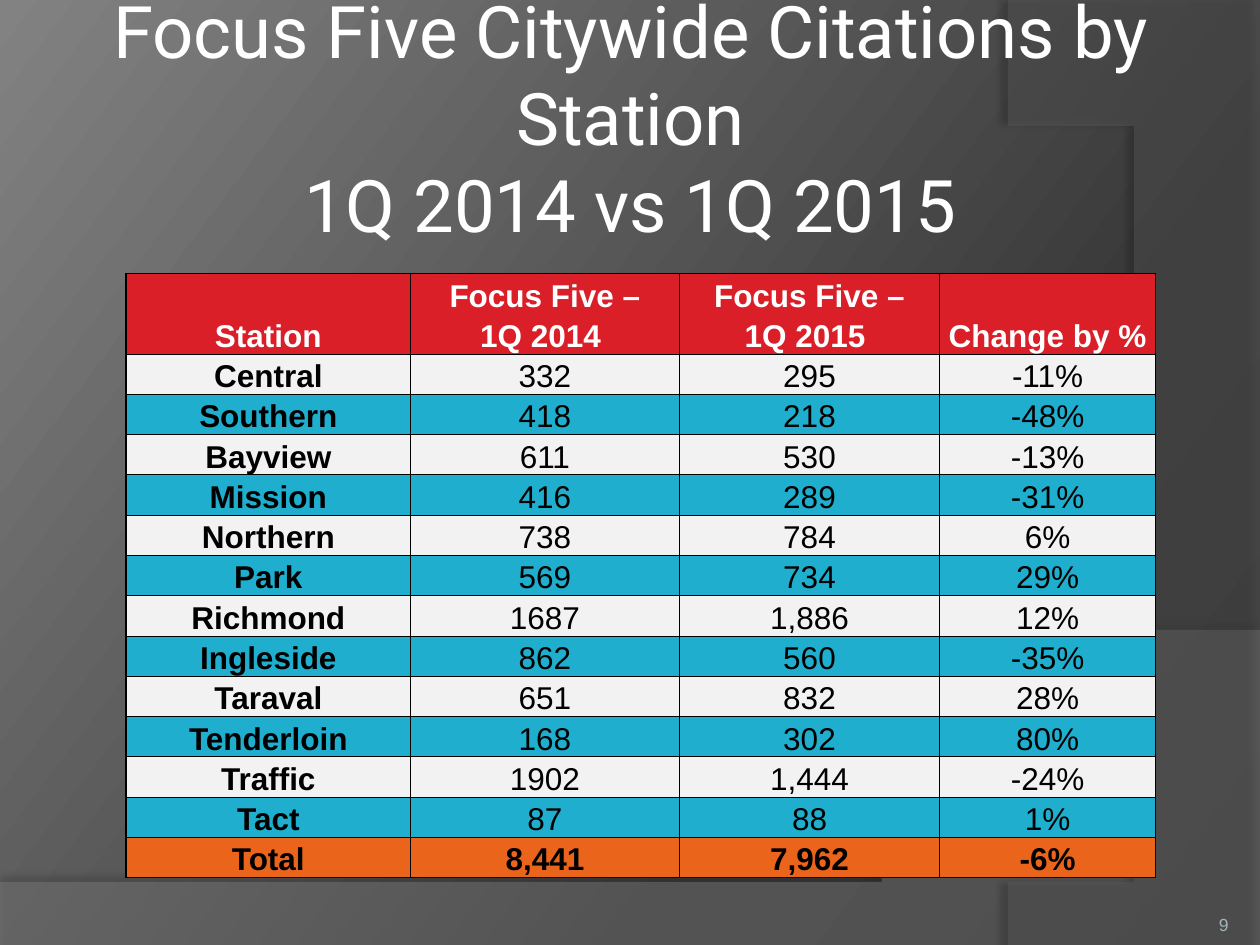
from dataclasses import dataclass

import lxml.etree as etree
import pptx
import pptx.dml.color
import pptx.enum.text
import pptx.oxml
import pptx.oxml.ns
import pptx.util
from pptx.dml.color import RGBColor
from pptx.util import Inches

WHITE = RGBColor(0xFF, 0xFF, 0xFF)
BLACK = RGBColor(0, 0, 0)
RED = RGBColor(0xDA, 0x1F, 0x28)
PALE = RGBColor(0xF2, 0xF2, 0xF2)
TEAL = RGBColor(0x1F, 0xAE, 0xCD)
ORANGE = RGBColor(0xEB, 0x64, 0x1B)
GRAY = RGBColor(0x7F, 0x7F, 0x7F)
DARK = RGBColor(0x5E, 0x5E, 0x5E)
MIST = RGBColor(0xA4, 0xB5, 0xB9)
GLOW = (
    (0, RGBColor(0x2F, 0x2F, 0x2F)),
    (30, RGBColor(0x38, 0x38, 0x38)),
    (100, RGBColor(0x82, 0x82, 0x82)),
)
NS = pptx.oxml.ns.nsdecls("a")
PLAIN = "{2D5ABB26-0587-4C30-8999-92F81FD0307C}"
ALIGN = pptx.enum.text.PP_ALIGN
ANCHOR = pptx.enum.text.MSO_ANCHOR

WIDTHS = (2.26, 2.13, 2.07, 1.71)
HEAD = (
    ("", "Focus Five –", "Focus Five –", "Change by %"),
    ("Station", "1Q 2014 ", "1Q 2015 ", ""),
)
ROWS = (
    ("Central", "332", "295", "-11%"),
    ("Southern", "418", "218", "-48%"),
    ("Bayview", "611", "530", "-13%"),
    ("Mission", "416", "289", "-31%"),
    ("Northern", "738", "784", "6%"),
    ("Park", "569", "734", "29%"),
    ("Richmond", "1687", "1,886", "12%"),
    ("Ingleside", "862", "560", "-35%"),
    ("Taraval", "651", "832", "28%"),
    ("Tenderloin", "168", "302", "80%"),
    ("Traffic", "1902", "1,444", "-24%"),
    ("Tact", "87", "88", "1%"),
    ("Total", "8,441", "7,962", "-6%"),
)

Point = tuple[float, float]


@dataclass
class Wave:
    """A filled outline; a step of three points is a Bezier curve."""
    start: Point
    steps: tuple[tuple[Point, ...], ...]
    fill: RGBColor
    alpha: int
    shade: int
    dist: float
    angle: int


WAVES = (
    Wave((0, 7.05),
         (((0, 7.5),), ((10, 7.5),), ((10, 5.2),),
          ((5.59, 7.29), (3.91, 7.19), (0, 7.05))),
         GRAY, 45, 35, 3.5, 270),
    Wave((10, 0.02),
         (((10, 7.5),), ((8.21, 7.5),),
          ((9.35, 6.19), (10.18, 3), (8, 0))),
         DARK, 40, 45, 4, 180),
)


def curve(ends: tuple[Point, ...], count: int = 40) -> list[Point]:
    """Sample a cubic Bezier curve, leaving out its first point."""
    out = []
    for step in range(1, count + 1):
        t = step / count
        mix = ((1 - t) ** 3, 3 * t * (1 - t) ** 2, 3 * t * t * (1 - t), t ** 3)
        out.append(tuple(sum(m * p[axis] for m, p in zip(mix, ends))
                         for axis in (0, 1)))
    return out


def draw_wave(slide, wave: Wave) -> None:
    last, dots = wave.start, []
    for step in wave.steps:
        dots += curve((last, *step)) if len(step) == 3 else step
        last = step[-1]
    pen = slide.shapes.build_freeform(*wave.start, scale=Inches(1))
    pen.add_line_segments(dots, close=True)
    shape = pen.convert_to_shape()
    shape.fill.solid()
    shape.fill.fore_color.rgb = wave.fill
    shape.line.fill.background()
    props = shape.element.spPr
    color = props.find(".//" + pptx.oxml.ns.qn("a:srgbClr"))
    etree.SubElement(color, pptx.oxml.ns.qn("a:alpha"), val=str(wave.alpha * 1000))
    props.append(pptx.oxml.parse_xml(
        f'<a:effectLst {NS}><a:outerShdw blurRad="{pptx.util.Pt(4)}" '
        f'dist="{pptx.util.Pt(wave.dist)}" dir="{wave.angle * 60000}" '
        f'algn="ctr" rotWithShape="0"><a:srgbClr val="{BLACK}">'
        f'<a:alpha val="{wave.shade * 1000}"/></a:srgbClr>'
        f'</a:outerShdw></a:effectLst>'))


def paint_back(slide) -> None:
    fill = slide.background.fill
    fill.gradient()
    stops = slide.element.find(".//" + pptx.oxml.ns.qn("a:gsLst"))
    for stop in list(stops):
        stops.remove(stop)
    for place, color in GLOW:
        stops.append(pptx.oxml.parse_xml(
            f'<a:gs {NS} pos="{place * 1000}"><a:srgbClr val="{color}"/></a:gs>'))
    fill.gradient_angle = 360 - 217


def put_text(frame, text: str, *, size: float = 18, font: str = "Arial",
             color: RGBColor = BLACK, bold: bool = False,
             align=ALIGN.CENTER) -> None:
    para = frame.paragraphs[0]
    para.text = text
    para.alignment = align
    for run in para.runs:
        run.font.size = pptx.util.Pt(size)
        run.font.name = font
        run.font.bold = bold
        run.font.color.rgb = color


def add_box(slide, left: float, top: float, width: float, height: float,
            inset: float, anchor):
    frame = slide.shapes.add_textbox(
        Inches(left), Inches(top), Inches(width), Inches(height)).text_frame
    frame.word_wrap = True
    frame.vertical_anchor = anchor
    frame.margin_left = frame.margin_right = Inches(inset)
    frame.margin_top = frame.margin_bottom = Inches(inset)
    return frame


def set_edges(cell, edges: dict[str, float]) -> None:
    """Draw black cell borders; widths are in points, sides L, R, T, B."""
    props = cell._tc.get_or_add_tcPr()
    for spot, (side, width) in enumerate(edges.items()):
        props.insert(spot, pptx.oxml.parse_xml(
            f'<a:ln{side} {NS} w="{pptx.util.Pt(width)}"><a:solidFill>'
            f'<a:srgbClr val="{BLACK}"/></a:solidFill></a:ln{side}>'))


def draw_table(slide) -> None:
    data = HEAD + ROWS
    end, side = len(data) - 1, len(WIDTHS) - 1
    grid = slide.shapes.add_table(
        len(data), len(WIDTHS), Inches(1), Inches(2.17),
        Inches(sum(WIDTHS)), Inches(0.32 * len(data))).table
    grid._tbl.tblPr.find(pptx.oxml.ns.qn("a:tableStyleId")).text = PLAIN
    for col, width in zip(grid.columns, WIDTHS):
        col.width = Inches(width)
    for r, row in enumerate(data):
        grid.rows[r].height = Inches(0.32)
        head = r < len(HEAD)
        fill = RED if head else ORANGE if r == end else (PALE, TEAL)[r % 2]
        for c, text in enumerate(row):
            cell = grid.cell(r, c)
            cell.margin_left = cell.margin_right = 0
            cell.margin_top = cell.margin_bottom = 0
            cell.vertical_anchor = ANCHOR.BOTTOM
            cell.fill.solid()
            cell.fill.fore_color.rgb = fill
            put_text(cell.text_frame, text, color=WHITE if head else BLACK,
                     bold=head or r == end or c == 0)
            edges = {"L": 0.5 if c else 1, "R": 1 if c == side else 0.5}
            if r != 1:
                edges["T"] = 0.5 if r else 1
            if r:
                edges["B"] = 1 if r == end else 0.5
            set_edges(cell, edges)
    grid.cell(0, side).merge(grid.cell(1, side))


def main() -> None:
    deck = pptx.Presentation()
    deck.slide_width, deck.slide_height = Inches(10), Inches(7.5)
    slide = deck.slides.add_slide(deck.slide_layouts[6])
    paint_back(slide)
    for wave in WAVES:
        draw_wave(slide, wave)
    title = add_box(slide, 0.17, 0.3, 9.67, 1.25, 0.05, ANCHOR.MIDDLE)
    put_text(title, "Focus Five Citywide Citations by Station\n1Q 2014 vs 1Q 2015",
             size=41.4, font="Roboto", color=WHITE)
    draw_table(slide)
    number = add_box(slide, 8.92, 7.02, 0.83, 0.4, 0, ANCHOR.BOTTOM)
    put_text(number, "9", size=10, color=MIST, align=ALIGN.RIGHT)
    deck.save("out.pptx")


if __name__ == "__main__":
    main()
